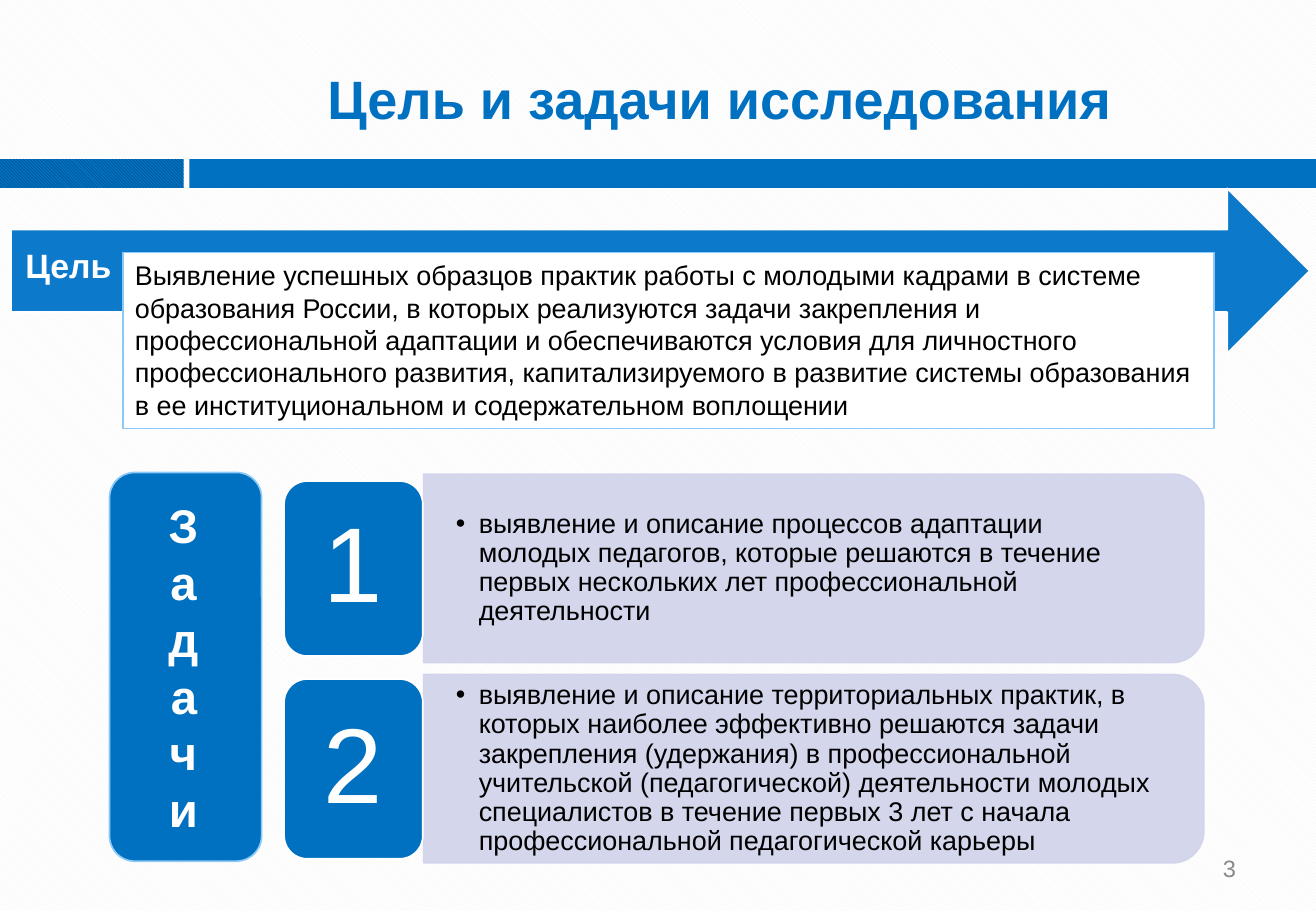
from lxml import etree
from pptx import Presentation
from pptx import util as u
from pptx.dml.color import RGBColor
from pptx.enum import dml, shapes, text
from pptx.oxml import ns

Cm, Pt = u.Cm, u.Pt
COLORS = {
    "blue": "0070C0", "navy": "073C65", "arrow": "0D79CA", "sky": "8CC9F7",
    "lavender": "D0D3EB", "white": "FFFFFF", "hatch": "F2F2F2",
    "black": "000000", "gray": "898989",
}
RGB = {name: RGBColor.from_string(value) for name, value in COLORS.items()}
LEFT, CENTER, RIGHT = text.PP_ALIGN.LEFT, text.PP_ALIGN.CENTER, text.PP_ALIGN.RIGHT
KIND = shapes.MSO_SHAPE


def add_block(kind, box, fill, line=None, width=1):
    block = slide.shapes.add_shape(kind, *(Cm(v) for v in box))
    block.shadow.inherit = False
    block.fill.solid()
    block.fill.fore_color.rgb = RGB[fill]
    if line:
        block.line.color.rgb = RGB[line]
        block.line.width = Pt(width)
    else:
        block.line.fill.background()
    return block


def write(shape, words, size, color, align=LEFT, bold=False, insets=(0.25, 0.13, 0.25, 0.13),
          anchor=text.MSO_ANCHOR.MIDDLE, spacing=1.0):
    """Set one paragraph in a shape; insets run left, top, right, bottom in cm."""
    frame = shape.text_frame
    frame.word_wrap = True
    frame.vertical_anchor = anchor
    frame.margin_left, frame.margin_top, frame.margin_right, frame.margin_bottom = (
        Cm(v) for v in insets)
    frame.text = words
    paragraph = frame.paragraphs[0]
    paragraph.alignment = align
    paragraph.line_spacing = spacing
    font = paragraph.runs[0].font
    font.name, font.size, font.bold = "Arial", Pt(size), bold
    font.color.rgb = RGB[color]
    return paragraph


prs = Presentation()
prs.slide_width, prs.slide_height = Cm(27.51), Cm(19.05)
slide = prs.slides.add_slide(prs.slide_layouts[6])

# Hatched background and header bars
band_short = add_block(KIND.RECTANGLE, (0, 3.33, 3.84, 0.6), "blue")
add_block(KIND.RECTANGLE, (3.96, 3.33, 23.55, 0.6), "blue")
for fill, fore, back in ((slide.background.fill, "hatch", "white"),
                         (band_short.fill, "navy", "blue")):
    fill.patterned()
    fill.pattern = dml.MSO_PATTERN.LIGHT_DOWNWARD_DIAGONAL
    fill.fore_color.rgb = RGB[fore]
    fill.back_color.rgb = RGB[back]

# Title and page number
for words, box, size, color, align, bold in (
    ("Цель и задачи исследования", (3.96, 0.76, 22.17, 2.57), 32, "blue", CENTER, True),
    ("3", (19.71, 17.65, 6.43, 1.02), 14, "gray", RIGHT, False),
):
    label = slide.shapes.add_textbox(*(Cm(v) for v in box))
    write(label, words, size, color, align, bold, insets=(0.3, 0.15, 0.3, 0.15))

# Goal
goal_arrow = add_block(KIND.RIGHT_ARROW, (0.23, 3.94, 27.15, 3.45), "arrow", "white")
write(goal_arrow, "Цель", 20, "white", bold=True, insets=(0.3, 0.15, 0.71, 0.3), spacing=0.9)
goal = add_block(KIND.RECTANGLE, (2.57, 5.28, 22.81, 3.68), "white", "sky", 0.75)
write(goal, "Выявление успешных образцов практик работы с молодыми кадрами в системе образования "
      "России, в которых реализуются задачи закрепления и профессиональной адаптации и "
      "обеспечиваются условия для личностного профессионального развития, капитализируемого "
      "в развитие системы образования в ее институциональном и содержательном воплощении",
      16, "black", anchor=text.MSO_ANCHOR.TOP)

# Tasks
tasks = (
    (10.06, 3.66, "выявление и описание процессов адаптации молодых педагогов, которые решаются "
     "в течение первых нескольких лет профессиональной деятельности"),
    (14.2, 3.76, "выявление и описание территориальных практик, в которых наиболее эффективно "
     "решаются задачи закрепления (удержания) в профессиональной учительской (педагогической) "
     "деятельности молодых специалистов в течение первых 3 лет с начала профессиональной "
     "педагогической карьеры"),
)
TASK_PITCH = 4.19
for index, (badge_top, badge_height, wording) in enumerate(tasks):
    shift = index * TASK_PITCH
    panel = add_block(KIND.ROUND_2_SAME_RECTANGLE, (15.04, 3.73 + shift, 3.94, 16.31),
                      "lavender", "lavender")
    panel.rotation = 90
    for color in panel.fill._xPr.iter(ns.qn("a:srgbClr")):
        etree.SubElement(color, ns.qn("a:alpha"), val="90000")

    task = slide.shapes.add_textbox(Cm(8.84), Cm(10.11 + shift), Cm(16.13), Cm(3.56))
    paragraph = write(task, wording, 16, "black", insets=(0.69, 0.36, 0.69, 0.36), spacing=0.9)
    properties = paragraph._p.get_or_add_pPr()
    properties.set("marL", str(Cm(0.48)))
    properties.set("indent", str(-Cm(0.48)))
    etree.SubElement(properties, ns.qn("a:buFont"), typeface="Arial")
    etree.SubElement(properties, ns.qn("a:buChar"), char="•")

    badge = add_block(KIND.ROUNDED_RECTANGLE, (5.94, badge_top, 2.9, badge_height),
                      "blue", "white")
    write(badge, str(index + 1), 63, "white", CENTER, insets=(0.66, 0.33, 0.66, 0.33),
          spacing=0.9)

# Vertical heading of the tasks
add_block(KIND.ROUNDED_RECTANGLE, (2.29, 9.88, 3.18, 8.13), "blue", "sky")
tasks_heading = slide.shapes.add_textbox(Cm(3.02), Cm(9.88), Cm(1.63), Cm(8.13))
write(tasks_heading, "Задачи", 28, "white", CENTER, bold=True)
tasks_heading.text_frame._txBody.bodyPr.set("vert", "wordArtVert")

prs.save("out.pptx")
